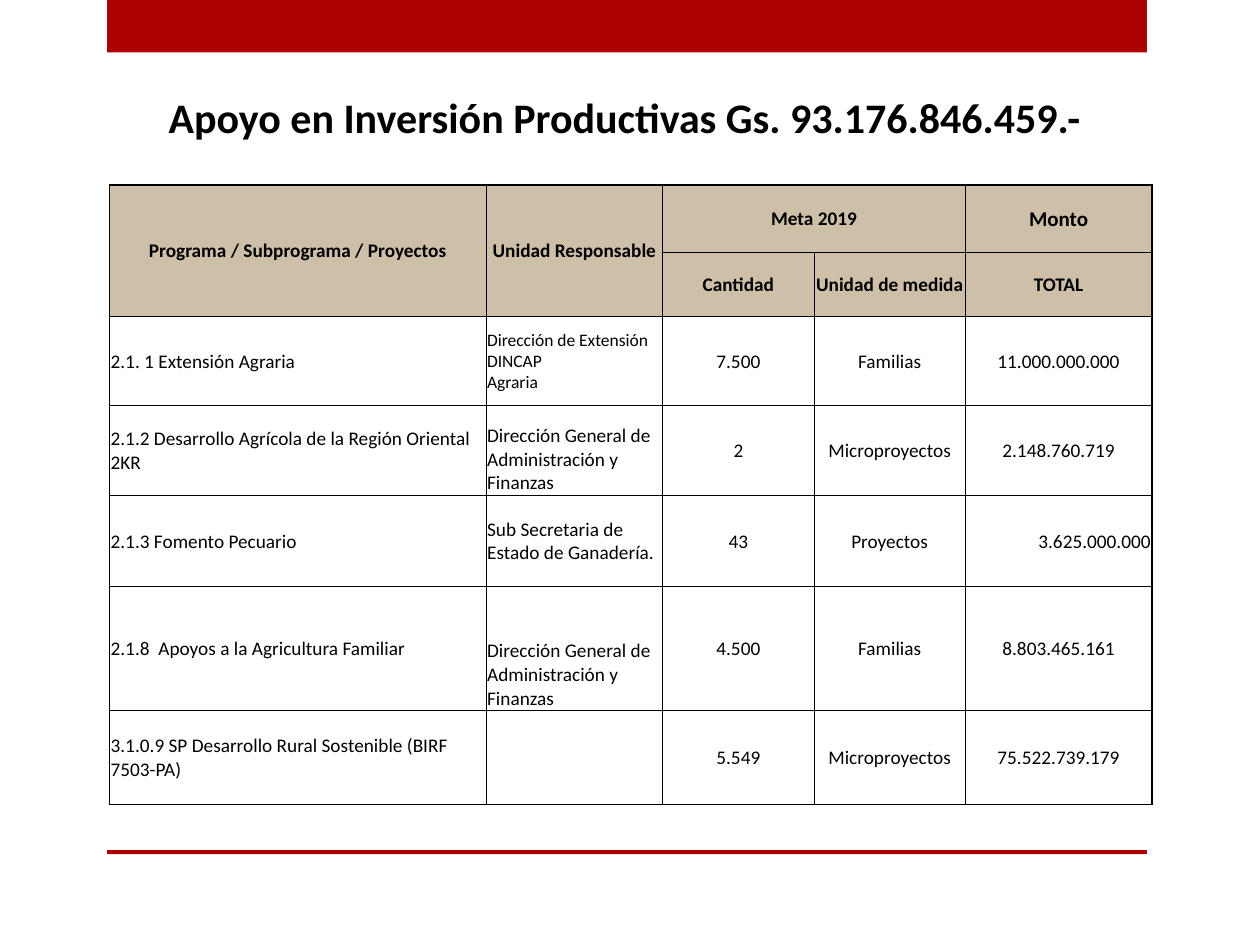
from lxml.etree import SubElement
from pptx import Presentation
from pptx.dml.color import RGBColor
from pptx.enum.shapes import MSO_SHAPE as Shape
from pptx.enum.text import MSO_ANCHOR as Anchor, PP_ALIGN as Align
from pptx.oxml.ns import qn
from pptx.util import Cm, Pt

RED = RGBColor(0xAD, 0x01, 0x01)
TAN = RGBColor(0xCD, 0xBF, 0xA8)
WHITE = RGBColor(0xFF, 0xFF, 0xFF)
BLACK = RGBColor(0, 0, 0)

COLUMN_WIDTHS = [7.59, 3.56, 3.05, 3.05, 3.76]
ROW_HEIGHTS = [1.35, 1.3, 1.8, 1.8, 1.85, 2.49, 1.9]
HEADER_ROWS = 2
OFFICE = "Dirección General de Administración y Finanzas"
ROWS = [
    ["Programa / Subprograma / Proyectos", "Unidad Responsable",
     "Meta 2019", "", "Monto"],
    ["", "", "Cantidad", "Unidad de medida", "TOTAL"],
    ["2.1. 1 Extensión Agraria", "Dirección de Extensión DINCAP\nAgraria",
     "7.500", "Familias", "11.000.000.000"],
    ["2.1.2 Desarrollo Agrícola de la Región Oriental 2KR", OFFICE,
     "2", "Microproyectos", "2.148.760.719"],
    ["2.1.3 Fomento Pecuario", "Sub Secretaria de Estado de Ganadería.",
     "43", "Proyectos", "3.625.000.000"],
    ["2.1.8  Apoyos a la Agricultura Familiar", OFFICE,
     "4.500", "Familias", "8.803.465.161"],
    ["3.1.0.9 SP Desarrollo Rural Sostenible (BIRF 7503-PA)", "",
     "5.549", "Microproyectos", "75.522.739.179"],
]
# Cells that depart from the usual format, by row and column
SIZES = {(0, 4): 12, (2, 1): 10}
ALIGNMENTS = {(4, 4): Align.RIGHT}


def write_text(frame, text, size=11, bold=False, align=Align.LEFT):
    for number, line in enumerate(text.split("\n")):
        para = frame.paragraphs[0] if number == 0 else frame.add_paragraph()
        para.alignment = align
        span = para.add_run()
        span.text = line
        span.font.name = "Calibri"
        span.font.size = Pt(size)
        span.font.bold = bold
        span.font.color.rgb = BLACK


def add_bar(page, top, height):
    bar = page.shapes.add_shape(Shape.RECTANGLE, Cm(2.16), Cm(top),
                                Cm(20.96), Cm(height))
    bar.shadow.inherit = False
    bar.fill.solid()
    bar.fill.fore_color.rgb = RED
    bar.line.fill.background()


def add_title(page, text):
    box = page.shapes.add_textbox(Cm(3.05), Cm(1.73), Cm(19.28), Cm(1.27))
    box.text_frame.word_wrap = False
    write_text(box.text_frame, text, size=24, bold=True, align=Align.CENTER)


def set_borders(cell, widths):
    """Draw the left, right, top and bottom borders, in that order."""
    properties = cell._tc.get_or_add_tcPr()
    for side, width in zip("LRTB", widths):
        line = SubElement(properties, qn(f"a:ln{side}"), w=str(Pt(width)))
        fill = SubElement(line, qn("a:solidFill"))
        SubElement(fill, qn("a:srgbClr"), val=str(BLACK))


def format_cell(cell, row, column):
    header = row < HEADER_ROWS
    row_end = row + cell.span_height
    column_end = column + cell.span_width
    # Heavy lines frame the table and close the header
    heavy_rows = (0, HEADER_ROWS, len(ROW_HEIGHTS))
    heavy_columns = (0, len(COLUMN_WIDTHS))
    set_borders(cell, [1 if heavy else 0.5 for heavy in (
        column in heavy_columns, column_end in heavy_columns,
        row in heavy_rows, row_end in heavy_rows)])
    cell.fill.solid()
    cell.fill.fore_color.rgb = TAN if header else WHITE
    cell.margin_left = cell.margin_right = cell.margin_top = Cm(0.02)
    cell.margin_bottom = 0

    text = ROWS[row][column]
    cell.vertical_anchor = Anchor.BOTTOM if text == OFFICE else Anchor.MIDDLE
    if text:
        usual = Align.CENTER if header or column > 1 else Align.LEFT
        write_text(cell.text_frame, text, size=SIZES.get((row, column), 11),
                   bold=header, align=ALIGNMENTS.get((row, column), usual))


def add_budget_table(page):
    table = page.shapes.add_table(
        len(ROW_HEIGHTS), len(COLUMN_WIDTHS), Cm(2.21), Cm(3.73),
        Cm(sum(COLUMN_WIDTHS)), Cm(sum(ROW_HEIGHTS))).table
    table.first_row = table.horz_banding = False
    for column, width in zip(table.columns, COLUMN_WIDTHS):
        column.width = Cm(width)
    for row, height in zip(table.rows, ROW_HEIGHTS):
        row.height = Cm(height)

    # Header cells that span rows or columns
    for column in (0, 1):
        table.cell(0, column).merge(table.cell(1, column))
    table.cell(0, 2).merge(table.cell(0, 3))

    for row in range(len(ROW_HEIGHTS)):
        for column in range(len(COLUMN_WIDTHS)):
            format_cell(table.cell(row, column), row, column)


def main():
    deck = Presentation()
    deck.slide_width, deck.slide_height = Cm(25.4), Cm(19.05)
    page = deck.slides.add_slide(deck.slide_layouts[6])

    # Red bands at the top and bottom
    add_bar(page, top=0, height=1.06)
    add_bar(page, top=17.14, height=0.08)

    # Title and budget
    add_title(page, "Apoyo en Inversión Productivas Gs. 93.176.846.459.- ")
    add_budget_table(page)

    deck.save("out.pptx")


if __name__ == "__main__":
    main()
